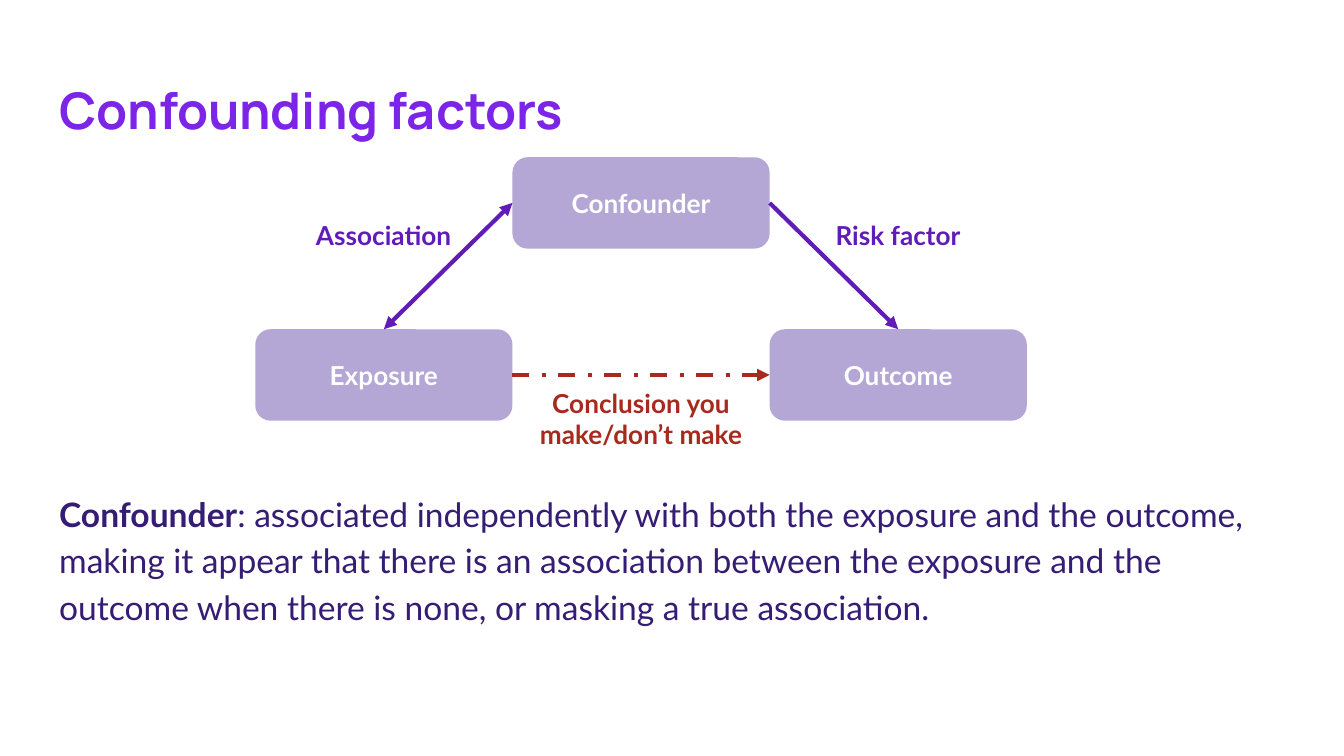
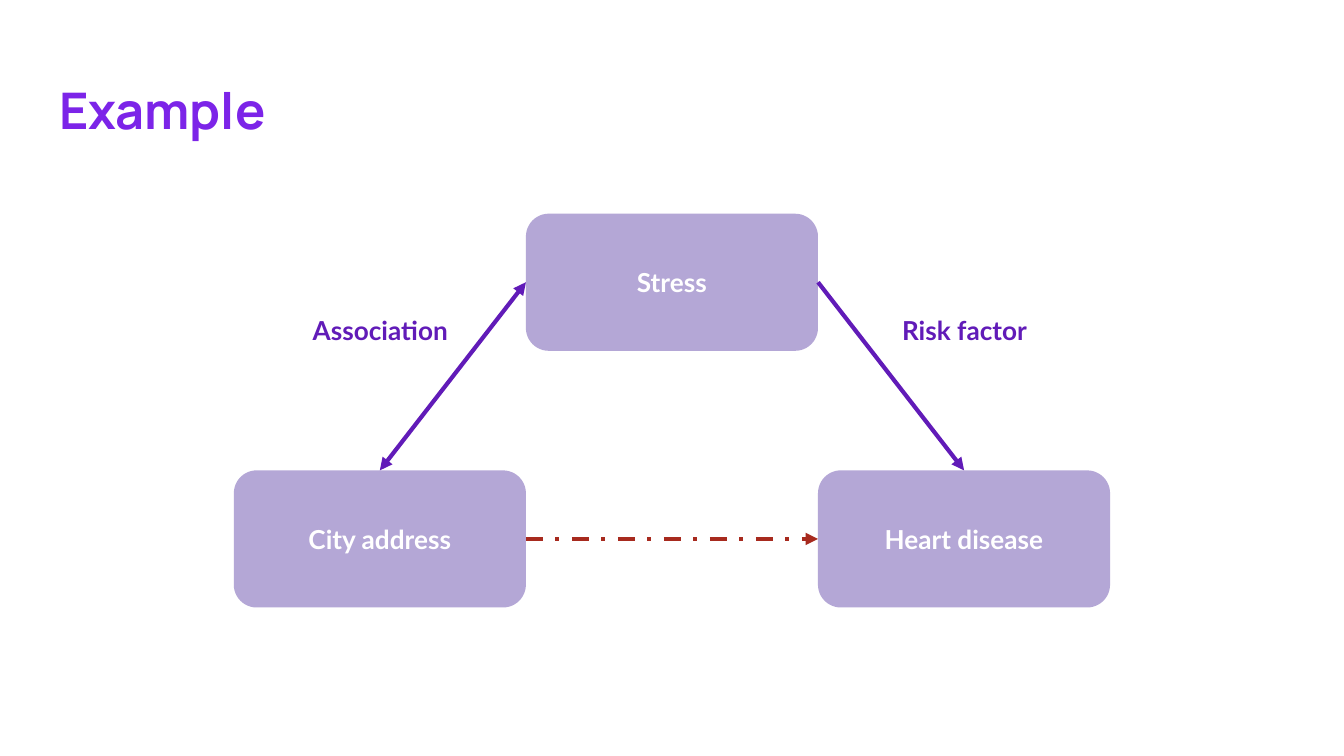
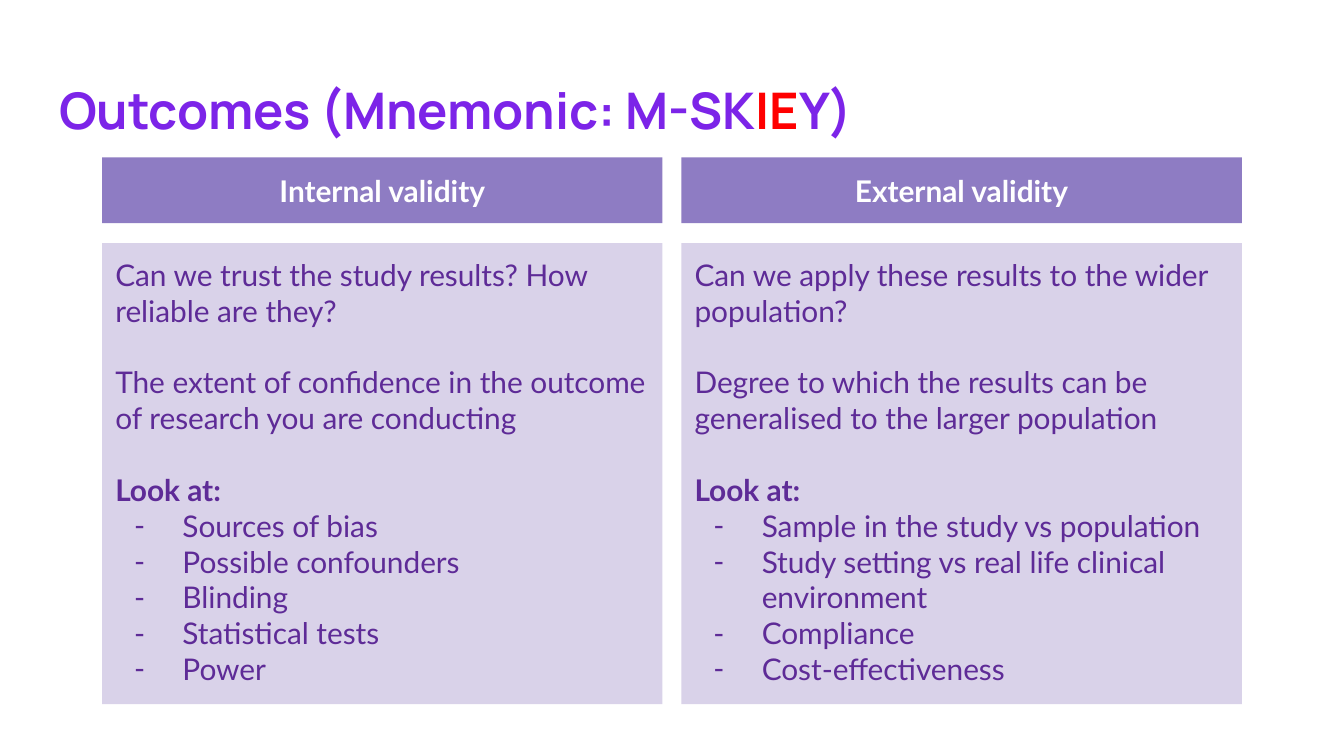
import dataclasses

import lxml.etree
import pptx
import pptx.dml.color
import pptx.enum.dml
import pptx.enum.shapes
import pptx.enum.text
import pptx.oxml.ns
import pptx.util

Inches = pptx.util.Inches
Pt = pptx.util.Pt
Shape = pptx.enum.shapes.MSO_SHAPE
Align = pptx.enum.text.PP_ALIGN
Anchor = pptx.enum.text.MSO_ANCHOR


@dataclasses.dataclass(frozen=True)
class Theme:
    """Colours, fonts and type sizes shared by the slides."""

    title: str = "7C24E8"
    highlight: str = "FF0000"
    body: str = "351C75"
    node: str = "B4A7D6"
    link: str = "611BB8"
    conclusion: str = "A72A1E"
    header: str = "8E7CC3"
    panel: str = "D9D2E9"
    panel_text: str = "5E2B97"
    white: str = "FFFFFF"
    title_font: str = "Manrope"
    text_font: str = "Lato"
    title_size: float = 27
    body_size: float = 18
    panel_size: float = 16
    node_size: float = 14
    line_width: float = 2.25


@dataclasses.dataclass(frozen=True)
class Box:
    """A rectangle in inches."""

    left: float
    top: float
    width: float
    height: float

    def lengths(self):
        """Return left, top, width and height as lengths."""
        return [Inches(value) for value in dataclasses.astuple(self)]


THEME = Theme()
TITLE_BOX = Box(0.34, 0.49, 9.32, 0.68)
BODY_BOX = Box(0.34, 3.53, 9.32, 1.9)


def rgb(value):
    """Turn a hex string into a colour."""
    return pptx.dml.color.RGBColor.from_string(value)


def add_element(parent, tag, **attributes):
    """Append a DrawingML element to a parent."""
    return lxml.etree.SubElement(parent, pptx.oxml.ns.qn(tag), attributes)


def style_paragraph(para, size, color, bold=None, font=THEME.text_font, align=Align.LEFT):
    """Set the font and alignment of a whole paragraph."""
    para.alignment = align
    para.font.name = font
    para.font.size = Pt(size)
    para.font.color.rgb = rgb(color)
    para.font.bold = bold


def set_indent(para, margin, indent, bullet=None, color=None):
    """Set the indents of a paragraph and its bullet, if any."""
    properties = para._p.get_or_add_pPr()
    properties.set("marL", str(Inches(margin)))
    properties.set("indent", str(Inches(indent)))
    if bullet:
        fill = add_element(properties, "a:buClr")
        add_element(fill, "a:srgbClr", val=color)
        add_element(properties, "a:buFont", typeface=THEME.text_font)
        add_element(properties, "a:buChar", char=bullet)
    else:
        add_element(properties, "a:buNone")


def prepare_frame(shape, anchor):
    """Give a text frame equal insets, wrapping and an anchor."""
    frame = shape.text_frame
    frame.word_wrap = True
    frame.auto_size = pptx.enum.text.MSO_AUTO_SIZE.NONE
    frame.vertical_anchor = anchor
    frame.margin_left = frame.margin_right = Inches(0.1)
    frame.margin_top = frame.margin_bottom = Inches(0.1)
    return frame


def place(shape, box):
    """Move a placeholder to a box."""
    shape.left, shape.top, shape.width, shape.height = box.lengths()


def add_page(deck, layout, *title):
    """Add a slide whose title is made of (text, colour) spans."""
    page = deck.slides.add_slide(deck.slide_layouts.get_by_name(layout))
    place(page.shapes.title, TITLE_BOX)
    para = prepare_frame(page.shapes.title, Anchor.TOP).paragraphs[0]
    style_paragraph(para, THEME.title_size, THEME.title, True, THEME.title_font)
    for text, color in title:
        span = para.add_run()
        span.text = text
        if color != THEME.title:
            span.font.color.rgb = rgb(color)
    return page


def add_block(page, kind, box, fill):
    """Add a filled shape without outline or shadow."""
    block = page.shapes.add_shape(kind, *box.lengths())
    block.shadow.inherit = False
    block.fill.solid()
    block.fill.fore_color.rgb = rgb(fill)
    block.line.fill.background()
    return block


def write_centred(shape, text, size, color):
    """Write one bold line of text in the middle of a shape."""
    para = prepare_frame(shape, Anchor.MIDDLE).paragraphs[0]
    para.text = text
    style_paragraph(para, size, color, True, align=Align.CENTER)


def add_label(page, box, text, color):
    """Add a bold centred label."""
    write_centred(page.shapes.add_textbox(*box.lengths()), text, THEME.node_size, color)


def add_arrow(page, start, start_site, end, end_site, color, dashed=False, both=False):
    """Join two shapes with an arrow."""
    arrow = page.shapes.add_connector(pptx.enum.shapes.MSO_CONNECTOR.STRAIGHT, 0, 0, 0, 0)
    arrow.begin_connect(start, start_site)
    arrow.end_connect(end, end_site)
    arrow.line.color.rgb = rgb(color)
    arrow.line.width = Pt(THEME.line_width)
    if dashed:
        arrow.line.dash_style = pptx.enum.dml.MSO_LINE.DASH_DOT
    line = arrow.line._get_or_add_ln()
    if both:
        add_element(line, "a:headEnd", type="triangle")
    add_element(line, "a:tailEnd", type="triangle")
    add_element(arrow._element.spPr, "a:effectLst")


def add_triangle(page, box, names, node_height, label_box, conclusion=None):
    """Draw confounder, exposure and outcome; the label box is relative to the diagram."""
    width = box.width / 3
    lower = box.top + box.height - node_height
    spots = [(1, box.top), (0, lower), (2, lower)]
    nodes = []
    for name, (column, top) in zip(names, spots):
        node_box = Box(box.left + column * width, top, width, node_height)
        node = add_block(page, Shape.ROUNDED_RECTANGLE, node_box, THEME.node)
        write_centred(node, name, THEME.node_size, THEME.white)
        nodes.append(node)
    confounder, exposure, outcome = nodes
    top_site, left_site, _, right_site = range(4)
    add_arrow(page, confounder, left_site, exposure, top_site, THEME.link, both=True)
    add_arrow(page, exposure, right_site, outcome, left_site, THEME.conclusion, dashed=True)
    add_arrow(page, confounder, right_site, outcome, top_site, THEME.link)
    for column, text in ((0, "Association"), (2, "Risk factor")):
        left = box.left + column * width + label_box.left
        spot = Box(left, box.top + label_box.top, label_box.width, label_box.height)
        add_label(page, spot, text, THEME.link)
    if conclusion:
        spot = Box(box.left + width + 0.04, lower + node_height / 2, width - 0.08, 0.65)
        add_label(page, spot, conclusion, THEME.conclusion)


def add_definition(page, term, meaning):
    """Fill the body placeholder with a term and its meaning."""
    body = page.placeholders[1]
    place(body, BODY_BOX)
    para = prepare_frame(body, Anchor.TOP).paragraphs[0]
    set_indent(para, 0, 0)
    para.line_spacing = 1.15
    para.space_before = Pt(0)
    para.space_after = Pt(12)
    style_paragraph(para, THEME.body_size, THEME.body)
    for text, bold in ((term, True), (meaning, False)):
        span = para.add_run()
        span.text = text
        span.font.bold = bold


def add_validity_column(page, box, heading, statements, checks):
    """Draw a header band above a panel of statements and a dashed list."""
    band_height, gap = 0.49, 0.15
    band_box = Box(box.left, box.top, box.width, band_height)
    band = add_block(page, Shape.RECTANGLE, band_box, THEME.header)
    write_centred(band, heading, THEME.panel_size, THEME.white)
    offset = band_height + gap
    panel_box = Box(box.left, box.top + offset, box.width, box.height - offset)
    panel = add_block(page, Shape.RECTANGLE, panel_box, THEME.panel)
    frame = prepare_frame(panel, Anchor.TOP)
    lines = [*statements, "Look at:", *checks]
    for index, text in enumerate(lines):
        para = frame.add_paragraph() if index else frame.paragraphs[0]
        para.text = text
        if index > len(statements):
            set_indent(para, 0.5, -0.36, "-", THEME.panel_text)
        elif index < len(statements):
            para.space_after = Pt(1.2 * THEME.panel_size)
        style_paragraph(para, THEME.panel_size, THEME.panel_text, index == len(statements))


def build_confounding(deck):
    """Build the slide that defines a confounder."""
    page = add_page(deck, "Title and Content", ("Confounding factors", THEME.title))
    add_definition(
        page,
        "Confounder",
        ": associated independently with both the exposure and the outcome, making it appear "
        "that there is an association between the exposure and the outcome when there is none, "
        "or masking a true association.",
    )
    add_triangle(
        page,
        Box(1.9, 1.17, 5.74, 1.96),
        ("Confounder", "Exposure", "Outcome"),
        0.68,
        Box(0.27, 0.36, 1.37, 0.44),
        "Conclusion you make/don’t make",
    )


def build_example(deck):
    """Build the slide with a worked example."""
    page = add_page(deck, "Title Only", ("Example", THEME.title))
    add_triangle(
        page,
        Box(1.74, 1.59, 6.52, 2.93),
        ("Stress", "City address", "Heart disease"),
        1.02,
        Box(0.31, 0.54, 1.56, 0.65),
    )


def build_outcomes(deck):
    """Build the slide that compares internal and external validity."""
    page = add_page(
        deck,
        "Title Only",
        ("Outcomes (Mnemonic: M-SK", THEME.title),
        ("IE", THEME.highlight),
        ("Y)", THEME.title),
    )
    columns = [
        (
            "Internal validity",
            [
                "Can we trust the study results? How reliable are they?",
                "The extent of confidence in the outcome of research you are conducting",
            ],
            ["Sources of bias", "Possible confounders", "Blinding", "Statistical tests", "Power"],
        ),
        (
            "External validity",
            [
                "Can we apply these results to the wider population?",
                "Degree to which the results can be generalised to the larger population",
            ],
            [
                "Sample in the study vs population",
                "Study setting vs real life clinical environment",
                "Compliance",
                "Cost-effectiveness",
            ],
        ),
    ]
    width, gap = 4.17, 0.14
    for index, column in enumerate(columns):
        add_validity_column(page, Box(0.76 + index * (width + gap), 1.17, width, 4.07), *column)


def main():
    """Build and save the deck."""
    deck = pptx.Presentation()
    deck.slide_width = Inches(10)
    deck.slide_height = Inches(10 * 9 / 16)
    build_confounding(deck)
    build_example(deck)
    build_outcomes(deck)
    deck.save("out.pptx")


if __name__ == "__main__":
    main()
